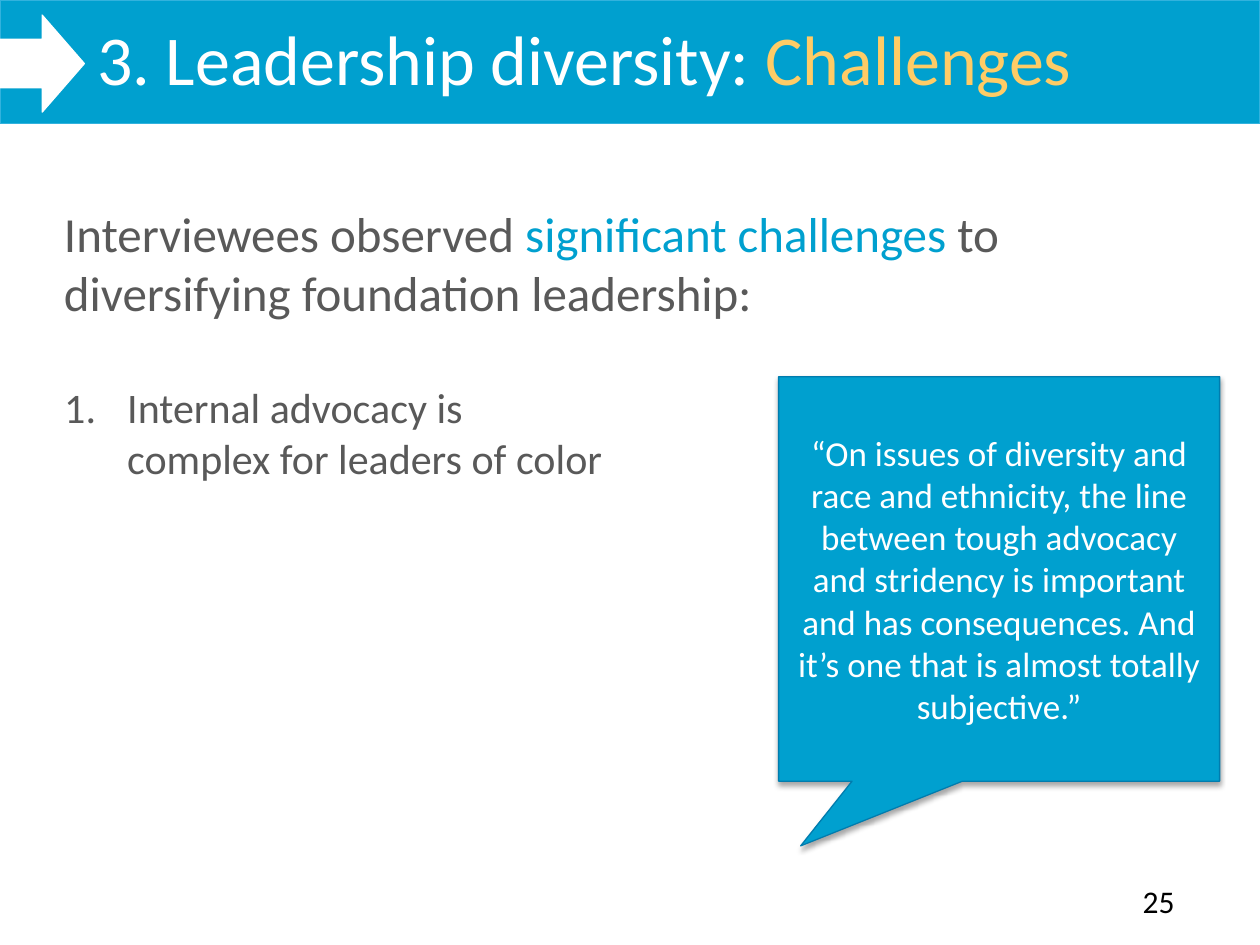
"""Build the slide on challenges to leadership diversity."""
import dataclasses

import lxml.etree
import pptx
import pptx.dml.color
import pptx.enum.shapes
import pptx.enum.text
import pptx.oxml.ns
import pptx.util

Inches = pptx.util.Inches
Pt = pptx.util.Pt
SHAPE = pptx.enum.shapes.MSO_SHAPE
ALIGN = pptx.enum.text.PP_ALIGN
ANCHOR = pptx.enum.text.MSO_ANCHOR
qn = pptx.oxml.ns.qn


@dataclasses.dataclass(frozen=True)
class Theme:
    font: str = "Calibri"
    blue: str = "00A0CF"
    light_blue: str = "32B2DD"
    dark_blue: str = "007CAE"
    yellow: str = "FFCC66"
    grey: str = "595959"
    white: str = "FFFFFF"
    black: str = "000000"
    title_size: int = 40
    lead_size: int = 28
    list_size: int = 24
    quote_size: int = 20
    number_size: int = 18


theme = Theme()
rgb = pptx.dml.color.RGBColor.from_string


def add_filled_shape(kind, box, fill, line):
    shape = slide.shapes.add_shape(kind, *map(Inches, box))
    shape.shadow.inherit = False
    shape.fill.solid()
    shape.fill.fore_color.rgb = rgb(fill)
    shape.line.color.rgb = rgb(line)
    shape.line.width = Pt(0.75)
    return shape


def write_text(shape, box, size, runs, align=ALIGN.LEFT, anchor=ANCHOR.TOP, after=0, hanging=0):
    shape.left, shape.top, shape.width, shape.height = map(Inches, box)
    frame = shape.text_frame
    frame.word_wrap = True
    frame.auto_size = pptx.enum.text.MSO_AUTO_SIZE.NONE
    frame.vertical_anchor = anchor
    paragraph = frame.paragraphs[0]
    paragraph.alignment = align
    paragraph.space_before = Pt(0)
    paragraph.space_after = Pt(after)
    properties = paragraph._p.get_or_add_pPr()
    properties.set("marL", str(Inches(hanging)))
    properties.set("indent", str(-Inches(hanging)))
    for text, color in runs:
        run = paragraph.add_run()
        run.text = text
        run.font.name = theme.font
        run.font.size = Pt(size)
        run.font.color.rgb = rgb(color)
    return properties


presentation = pptx.Presentation()
presentation.slide_width = Inches(10)
presentation.slide_height = Inches(7.5)
slide = presentation.slides.add_slide(presentation.slide_layouts[1])
title, challenge_list = slide.placeholders

add_filled_shape(SHAPE.RECTANGLE, (0, 0, 10, 0.98), theme.blue, theme.light_blue)
add_filled_shape(SHAPE.RIGHT_ARROW, (0, 0.12, 0.67, 0.77), theme.white, theme.white)

slide.shapes.element.append(title.element)
write_text(title, (0.67, 0.07, 9.33, 1.25), theme.title_size,
           [("3. Leadership diversity: ", theme.white), ("Challenges", theme.yellow)],
           hanging=0.5)

number_box = slide.shapes.add_textbox(0, 0, 0, 0)
write_text(number_box, (8.97, 6.95, 0.53, 0.4), theme.number_size, [("25", theme.black)])

lead_box = slide.shapes.add_textbox(0, 0, 0, 0)
write_text(lead_box, (0.41, 1.57, 9.26, 1.04), theme.lead_size,
           [("Interviewees observed ", theme.grey),
            ("significant challenges ", theme.blue),
            ("to diversifying foundation leadership:", theme.grey)],
           after=12)

slide.shapes.element.append(challenge_list.element)
list_properties = write_text(
    challenge_list, (0.41, 2.98, 4.47, 1.31), theme.list_size,
    [("Internal advocacy is complex for leaders of color", theme.grey)],
    after=12, hanging=0.5)
lxml.etree.SubElement(list_properties, qn("a:buFont"), typeface="+mj-lt")
lxml.etree.SubElement(list_properties, qn("a:buAutoNum"), type="arabicPeriod")

quote_box = (6.18, 2.99, 3.5, 3.21)
callout = add_filled_shape(SHAPE.RECTANGULAR_CALLOUT, quote_box, theme.blue, theme.dark_blue)
callout.adjustments[0] = -0.45
callout.adjustments[1] = 0.66
write_text(callout, quote_box, theme.quote_size,
           [("“On issues of diversity and race and ethnicity, the line between tough "
             "advocacy and stridency is important and has consequences. And it’s one "
             "that is almost totally subjective.”", theme.white)],
           align=ALIGN.CENTER, anchor=ANCHOR.MIDDLE)
effects = callout.element.spPr.find(qn("a:effectLst"))
shadow = lxml.etree.SubElement(effects, qn("a:outerShdw"), blurRad=str(Pt(3.1)),
                               dist=str(Pt(1.8)), dir="5400000", rotWithShape="0")
shadow_color = lxml.etree.SubElement(shadow, qn("a:srgbClr"), val=theme.black)
lxml.etree.SubElement(shadow_color, qn("a:alpha"), val="35000")

presentation.save("out.pptx")
